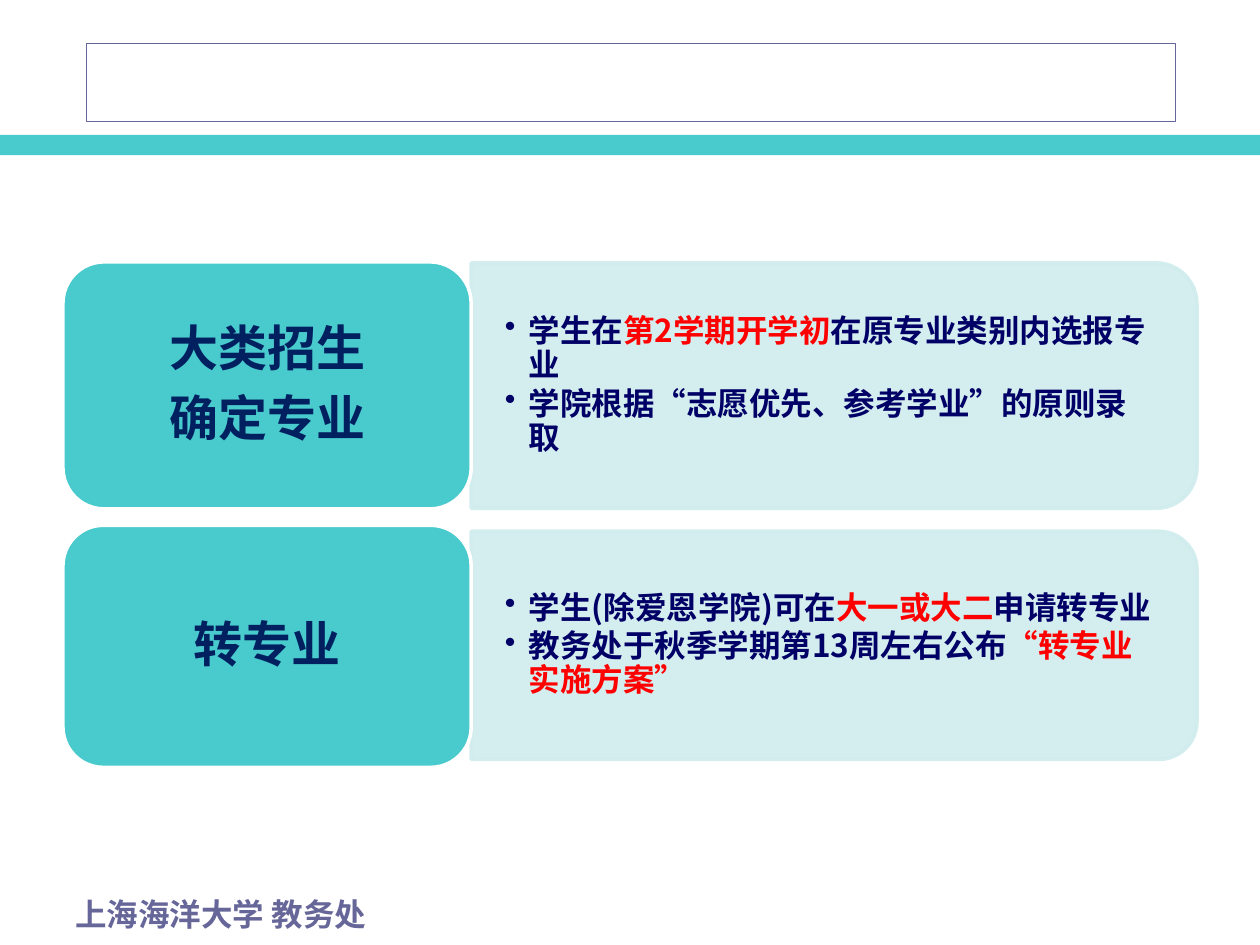
from lxml.etree import SubElement
from pptx import Presentation
from pptx.dml.color import RGBColor
from pptx.enum.lang import MSO_LANGUAGE_ID
from pptx.enum.shapes import MSO_SHAPE
from pptx.enum.text import MSO_ANCHOR, PP_ALIGN
from pptx.oxml.ns import qn
from pptx.util import Cm, Pt

TEAL, PALE, WHITE = "49CACD", "D0ECED", "FFFFFF"
NAVY, INK, RED, SLATE = "000066", "002060", "FF0000", "666699"
CJK, SANS = "Noto Sans CJK SC", "DejaVu Sans"

ROWS = [
    (5.28, 4.98, 5.3, 4.95, ["大类招生", "确定专业"], [
        [("学生在", NAVY), ("第2学期开学初", RED),
         ("在原专业类别内选报专业", NAVY)],
        [("学院根据“志愿优先、参考学业”的原则录取", NAVY)],
    ]),
    (10.59, 4.88, 10.71, 4.6, ["转专业"], [
        [("学生(除爱恩学院)可在", NAVY), ("大一或大二", RED),
         ("申请转专业", NAVY)],
        [("教务处于秋季学期第13周左右公布", NAVY),
         ("“转专业实施方案”", RED)],
    ]),
]


def color(code):
    return RGBColor.from_string(code)


def add_box(slide, kind, place, fill=None, line=None, width=2):
    box = slide.shapes.add_shape(kind, *map(Cm, place))
    box.shadow.inherit = False
    if fill:
        box.fill.solid()
        box.fill.fore_color.rgb = color(fill)
    else:
        box.fill.background()
    if line:
        box.line.color.rgb = color(line)
        box.line.width = Pt(width)
    else:
        box.line.fill.background()
    return box


def fade(shape, share):
    for tint in shape._element.spPr.iter(qn("a:srgbClr")):
        SubElement(tint, qn("a:alpha"), val=str(share * 1000))


def add_frame(slide, place, inset, anchor=MSO_ANCHOR.MIDDLE):
    frame = slide.shapes.add_textbox(*map(Cm, place)).text_frame
    frame.word_wrap = True
    frame.vertical_anchor = anchor
    frame.margin_left = frame.margin_right = Cm(inset)
    frame.margin_top = frame.margin_bottom = Cm(inset / 2)
    return frame


def style(run, size, code, face=CJK):
    font = run.font
    font.size = Pt(size)
    font.bold = True
    font.color.rgb = color(code)
    font.name = face
    font.language_id = MSO_LANGUAGE_ID.SIMPLIFIED_CHINESE
    SubElement(font._element, qn("a:ea"), typeface=CJK)


def add_label(slide, place, lines):
    frame = add_frame(slide, place, 0.3)
    frame.text = "\n".join(lines)
    for para in frame.paragraphs:
        para.alignment = PP_ALIGN.CENTER
        para.line_spacing = 0.9
        para.space_after = Pt(9.8)
        style(para.runs[0], 28, INK, SANS)


def add_list(slide, place, items):
    frame = add_frame(slide, place, 0.68)
    for index, parts in enumerate(items):
        para = frame.add_paragraph() if index else frame.paragraphs[0]
        para.line_spacing = 0.9
        para.space_after = Pt(2.7)
        props = para._p.get_or_add_pPr()
        props.set("marL", str(Cm(0.48)))
        props.set("indent", str(Cm(-0.48)))
        SubElement(props, qn("a:buChar"), char="•")
        for words, code in parts:
            run = para.add_run()
            run.text = words
            style(run, 18, code)


def add_row(slide, top, high, start, depth, lines, items):
    left, wide, span = 9.5, 8.23, 14.63
    place = (left + (span - depth) / 2, start + (depth - span) / 2, depth, span)
    panel = add_box(slide, MSO_SHAPE.ROUND_2_SAME_RECTANGLE, place, PALE, PALE)
    panel.rotation = 90
    fade(panel, 90)
    add_list(slide, (left, start + 0.24, 14.46, depth - 0.48), items)
    add_box(slide, MSO_SHAPE.ROUNDED_RECTANGLE,
            (1.27, top, wide, high), TEAL, WHITE)
    add_label(slide, (1.51, top + 0.24, wide - 0.48, high - 0.48), lines)


def main():
    deck = Presentation()
    deck.slide_width, deck.slide_height = Cm(25.4), Cm(19.05)
    slide = deck.slides.add_slide(deck.slide_layouts[6])
    add_box(slide, MSO_SHAPE.RECTANGLE, (0, 2.72, 25.4, 0.41), TEAL)
    for row in ROWS:
        add_row(slide, *row)
    add_box(slide, MSO_SHAPE.RECTANGLE, (1.75, 0.88, 21.95, 1.57),
            line=SLATE, width=0.75)
    foot = add_frame(slide, (1.27, 17.91, 6.8, 0.9), 0.25, MSO_ANCHOR.TOP)
    foot.text = "上海海洋大学 教务处"
    style(foot.paragraphs[0].runs[0], 18, SLATE)
    deck.save("out.pptx")


if __name__ == "__main__":
    main()
